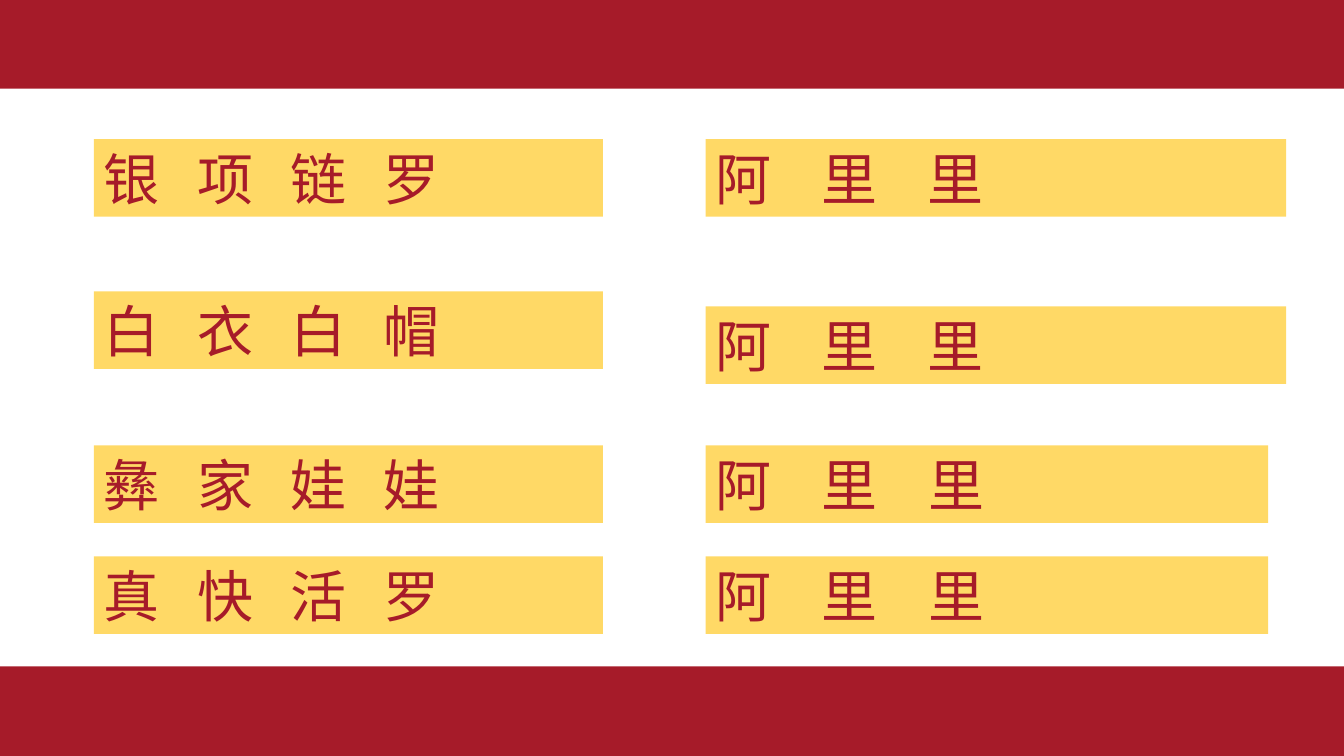
from lxml.etree import SubElement as Sub
from pptx import Presentation
from pptx.dml.color import RGBColor as Color
from pptx.enum.shapes import MSO_SHAPE as Shape
from pptx.enum.text import MSO_ANCHOR as Anchor, MSO_AUTO_SIZE as Auto, PP_ALIGN as Align
from pptx.oxml.ns import qn
from pptx.util import Pt

LEFT = [
    ("银项链罗", 99.4),
    ("白衣白帽", 208.1),
    ("彝家娃娃", 318.2),
    ("真快活罗", 397.4),
]
RIGHT = [
    ("阿里里", 99.4, 414.7),
    ("阿里里", 218.9, 414.7),
    ("阿里里", 318.2, 401.8),
    ("阿里里", 397.4, 401.8),
]
THEME = {
    "red": Color.from_string("A61B29"),
    "gold": Color.from_string("FFD966"),
    "white": Color.from_string("FFFFFF"),
    "font": "Noto Sans CJK SC",
    "size": Pt(40),
}
SIZE = (960, 540)
PANEL = (-0.7, 63.4, 962, 412.6)
HIGH = 55.4
FRAME = {"word_wrap": True, "auto_size": Auto.NONE, "vertical_anchor": Anchor.MIDDLE}
FONT = {"name": THEME["font"], "size": THEME["size"]}


def style(item, form):
    for key, value in form.items():
        setattr(item, key, value)


def block(slide, box, tint):
    shape = slide.shapes.add_shape(Shape.RECTANGLE, *map(Pt, box))
    shape.shadow.inherit = False
    shape.fill.solid()
    shape.fill.fore_color.rgb = THEME[tint]
    shape.line.fill.background()
    return shape


def lyric(slide, words, box, pitch):
    frame = block(slide, box, "gold").text_frame
    style(frame, FRAME)
    line = frame.paragraphs[0]
    line.alignment = Align.LEFT
    run = line.add_run()
    run.text = "\t".join(words)
    style(run.font, FONT)
    run.font.color.rgb = THEME["red"]
    Sub(run.font._element, qn("a:ea"), typeface=THEME["font"])
    run.font._element.append(run.font._element.find(qn("a:latin")))
    run.font._element.append(run.font._element.find(qn("a:ea")))
    stops = Sub(line._p.get_or_add_pPr(), qn("a:tabLst"))
    for step in range(1, len(words)):
        Sub(stops, qn("a:tab"), pos=str(Pt(step * pitch)), algn="l")


def main():
    deck = Presentation()
    style(deck, dict(zip(("slide_width", "slide_height"), map(Pt, SIZE))))
    slide = deck.slides.add_slide(deck.slide_layouts[6])
    back = slide.background.fill
    back.solid()
    back.fore_color.rgb = THEME["red"]
    block(slide, PANEL, "white")
    for words, top in LEFT:
        lyric(slide, words, (67, top, 363.6, HIGH), 66.7)
    for words, top, wide in RIGHT:
        lyric(slide, words, (504, top, wide, HIGH), 75.9)
    deck.save("out.pptx")


if __name__ == "__main__":
    main()
